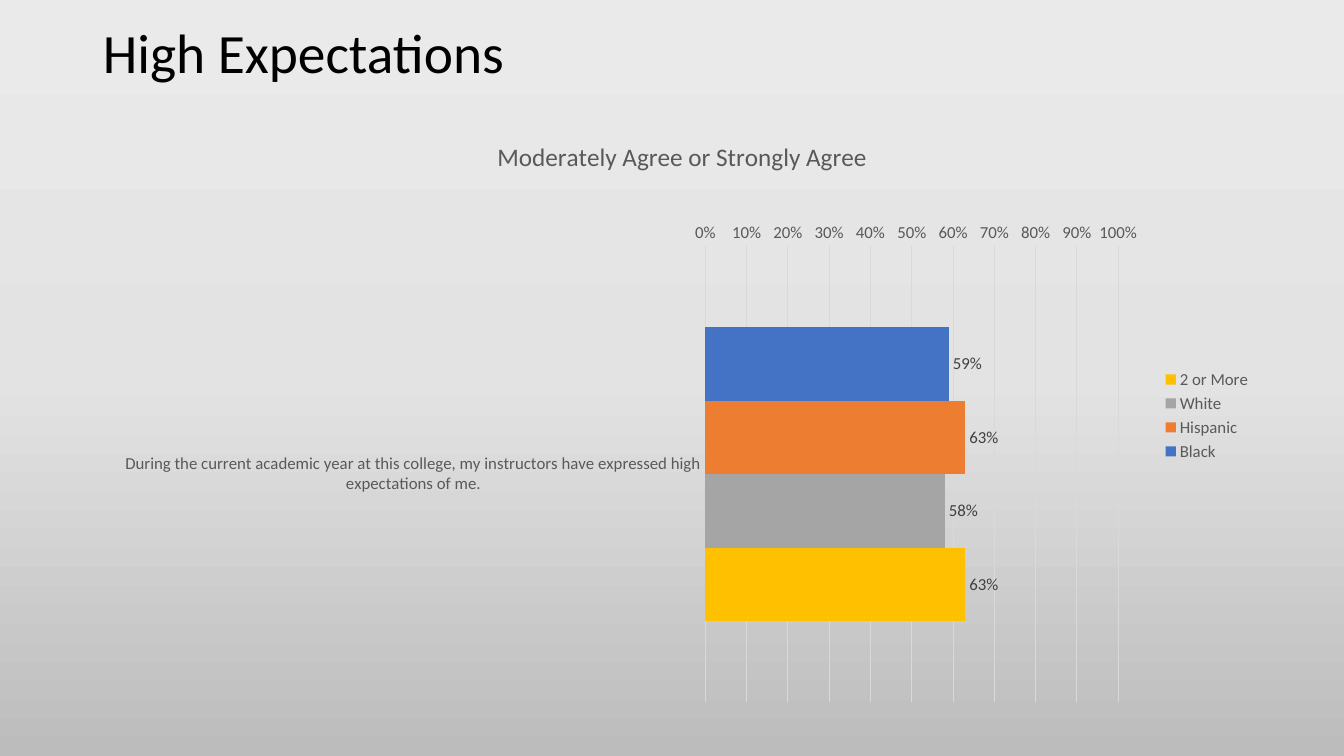
import copy

import pptx
import pptx.chart.data
import pptx.dml.color
import pptx.enum.chart
import pptx.enum.text
import pptx.oxml.ns
import pptx.util

RGBColor = pptx.dml.color.RGBColor
BLACK = RGBColor(0x00, 0x00, 0x00)
LABEL_GRAY = RGBColor(0x40, 0x40, 0x40)
TEXT_GRAY = RGBColor(0x59, 0x59, 0x59)
LINE_GRAY = RGBColor(0xD9, 0xD9, 0xD9)
BACKGROUND_STOPS = [
    (0, RGBColor(0xEB, 0xEA, 0xEA)),
    (0.5, RGBColor(0xE4, 0xE3, 0xE3)),
    (1, RGBColor(0xBD, 0xBC, 0xBC)),
]
FONT_NAME = "Calibri"
WIDTH = pptx.util.Inches(13.33)
HEIGHT = pptx.util.Inches(7.5)

QUESTION = (
    "During the current academic year at this college, "
    "my instructors have expressed high expectations of me."
)
# Group, share that agrees, bar colour
GROUPS = [
    ("Black", 0.59, RGBColor(0x44, 0x72, 0xC4)),
    ("Hispanic", 0.63, RGBColor(0xED, 0x7D, 0x31)),
    ("White", 0.58, RGBColor(0xA5, 0xA5, 0xA5)),
    ("2 or More", 0.63, RGBColor(0xFF, 0xC0, 0x00)),
]


def box(left, top, width, height):
    """Turn shares of the slide's size into lengths."""
    return (int(left * WIDTH), int(top * HEIGHT),
            int(width * WIDTH), int(height * HEIGHT))


def format_font(font, size, color):
    font.name = FONT_NAME
    font.size = pptx.util.Pt(size)
    font.bold = False
    font.color.rgb = color


def write_text(text_frame, text, size, color, alignment=None, line_spacing=None):
    paragraph = text_frame.paragraphs[0]
    paragraph.alignment = alignment
    paragraph.line_spacing = line_spacing
    run = paragraph.add_run()
    run.text = text
    format_font(run.font, size, color)


def format_line(line, color):
    line.color.rgb = color
    line.width = pptx.util.Pt(0.75)


def fill_background(slide):
    fill = slide.background.fill
    fill.gradient()
    fill.gradient_angle = 270
    first_stop = next(slide.element.iter(pptx.oxml.ns.qn("a:gs")))
    first_stop.addnext(copy.deepcopy(first_stop))
    for stop, (position, color) in zip(fill.gradient_stops, BACKGROUND_STOPS):
        stop.position = position
        stop.color.rgb = color


def add_title(slide, text):
    title = slide.shapes.title
    title.left, title.top, title.width, title.height = box(0.069, 0.029, 0.863, 0.09)
    text_frame = title.text_frame
    text_frame.word_wrap = True
    text_frame.auto_size = pptx.enum.text.MSO_AUTO_SIZE.NONE
    text_frame.vertical_anchor = pptx.enum.text.MSO_ANCHOR.MIDDLE
    write_text(text_frame, text, 39.6, BLACK,
               alignment=pptx.enum.text.PP_ALIGN.LEFT, line_spacing=0.9)


def format_axes(chart):
    for axis in (chart.category_axis, chart.value_axis):
        axis.major_tick_mark = pptx.enum.chart.XL_TICK_MARK.NONE
        axis.minor_tick_mark = pptx.enum.chart.XL_TICK_MARK.NONE
        format_font(axis.tick_labels.font, 12, TEXT_GRAY)
    chart.category_axis.reverse_order = True
    format_line(chart.category_axis.format.line, LINE_GRAY)

    value_axis = chart.value_axis
    value_axis.minimum_scale = 0
    value_axis.maximum_scale = 1
    value_axis.major_unit = 0.1
    value_axis.tick_labels.number_format = "0%"
    value_axis.tick_labels.number_format_is_linked = False
    value_axis.format.line.fill.background()
    value_axis.has_major_gridlines = True
    format_line(value_axis.major_gridlines.format.line, LINE_GRAY)


def format_bars(plot):
    plot.gap_width = 219
    plot.vary_by_categories = False
    for series, (_, _, color) in zip(plot.series, GROUPS):
        series.format.fill.solid()
        series.format.fill.fore_color.rgb = color
        labels = series.data_labels
        labels.show_value = True
        labels.number_format = "0%"
        labels.number_format_is_linked = False
        labels.position = pptx.enum.chart.XL_LABEL_POSITION.OUTSIDE_END
        format_font(labels.font, 12, LABEL_GRAY)


def add_agreement_chart(slide, title):
    chart_data = pptx.chart.data.CategoryChartData(number_format="0%")
    chart_data.categories = [QUESTION]
    for name, share, _ in GROUPS:
        chart_data.add_series(name, [share])
    chart = slide.shapes.add_chart(
        pptx.enum.chart.XL_CHART_TYPE.BAR_CLUSTERED,
        *box(0.076, 0.155, 0.863, 0.789), chart_data).chart
    format_font(chart.font, 10, BLACK)

    chart.has_title = True
    chart.chart_title.include_in_layout = False
    title_frame = chart.chart_title.text_frame
    write_text(title_frame, title, 18, TEXT_GRAY)
    title_frame.add_paragraph()

    chart.has_legend = True
    chart.legend.position = pptx.enum.chart.XL_LEGEND_POSITION.RIGHT
    chart.legend.include_in_layout = False
    format_font(chart.legend.font, 12, TEXT_GRAY)

    format_axes(chart)
    format_bars(chart.plots[0])


def main():
    presentation = pptx.Presentation()
    presentation.slide_width = WIDTH
    presentation.slide_height = HEIGHT
    slide = presentation.slides.add_slide(presentation.slide_layouts[5])
    fill_background(slide)
    add_title(slide, "High Expectations")
    add_agreement_chart(slide, "Moderately Agree or Strongly Agree")
    presentation.save("out.pptx")


if __name__ == "__main__":
    main()
